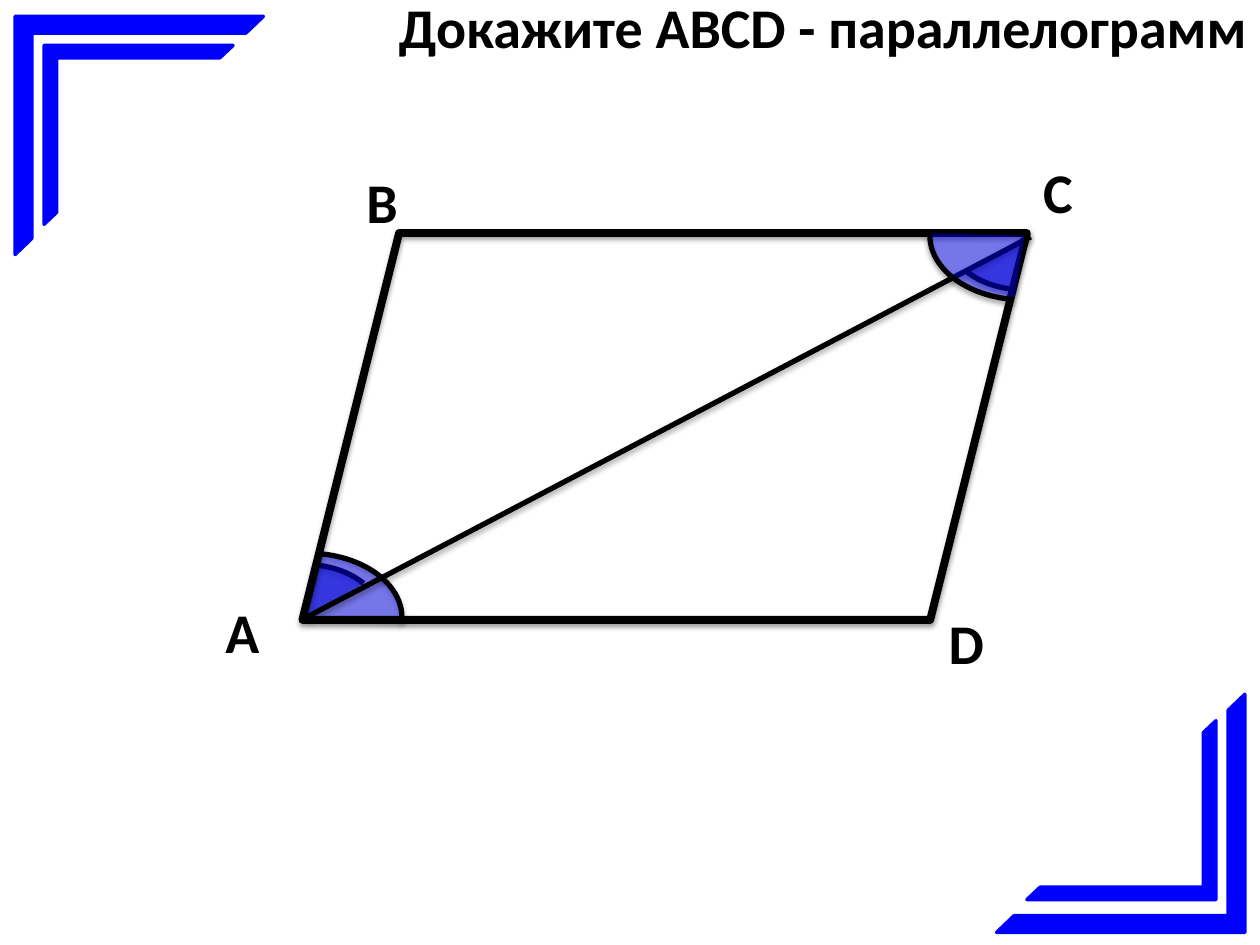
from typing import NamedTuple

from lxml.etree import SubElement
from pptx import Presentation
from pptx.dml.color import RGBColor
from pptx.enum.shapes import MSO_CONNECTOR, MSO_SHAPE
from pptx.enum.text import MSO_AUTO_SIZE, PP_ALIGN
from pptx.oxml.ns import qn
from pptx.util import Inches, Pt

BLACK = "000000"
BLUE = "0000FF"


class Box(NamedTuple):
    left: float
    top: float
    width: float
    height: float


class AngleMark(NamedTuple):
    box: Box
    end: float
    rotation: int


class Corner(NamedTuple):
    outer: Box
    inner: Box
    rotation: int


class Label(NamedTuple):
    text: str
    box: Box


INNER_END = 197.63
ANGLE_START = 167.49
ANGLES_BELOW = [
    AngleMark(Box(7.52, 1.45, 1.22, 0.85), INNER_END, 180),
    AngleMark(Box(1.81, 4.48, 1.22, 0.85), INNER_END, 0),
    AngleMark(Box(1.69, 4.39, 1.5, 1.02), 1.74, 0),
]
ANGLE_ON_TOP = AngleMark(Box(7.38, 1.36, 1.5, 1.02), 0.81, 180)
CORNERS = [
    Corner(Box(0.12, 0.13, 1.97, 1.89), Box(0.35, 0.36, 1.5, 1.42), 0),
    Corner(Box(7.91, 5.51, 1.97, 1.89), Box(8.15, 5.72, 1.5, 1.42), 180),
]
TITLE = Label("Докажите ABCD - параллелограмм", Box(2.32, -0.11, 7.68, 0.64))
VERTICES = [
    Label("А", Box(1.69, 4.69, 0.47, 0.64)),
    Label("D", Box(7.43, 4.78, 0.48, 0.64)),
    Label("C", Box(8.18, 1.2, 0.44, 0.64)),
    Label("B", Box(2.81, 1.28, 0.45, 0.64)),
]


def color(hex_code: str) -> RGBColor:
    return RGBColor.from_string(hex_code)


def set_line(shape, hex_code: str, width: float) -> None:
    shape.line.color.rgb = color(hex_code)
    shape.line.width = Pt(width)


def set_shadow(shape, distance: float, opacity: int) -> None:
    """Add a soft downward shadow; call after fill and line are set."""
    effects = SubElement(shape.element.spPr, qn("a:effectLst"))
    outer = SubElement(effects, qn("a:outerShdw"), blurRad=str(Pt(3.1)),
                       dist=str(Pt(distance)), dir="5400000", rotWithShape="0")
    tint = SubElement(outer, qn("a:srgbClr"), val=BLACK)
    SubElement(tint, qn("a:alpha"), val=str(opacity * 1000))


def add_preset(slide, preset: MSO_SHAPE, box: Box, rotation: int = 0):
    shape = slide.shapes.add_shape(preset, *map(Inches, box))
    shape.rotation = rotation
    return shape


def add_angle(slide, mark: AngleMark) -> None:
    arc = add_preset(slide, MSO_SHAPE.ARC, mark.box, mark.rotation)
    arc.adjustments[0] = ANGLE_START
    arc.adjustments[1] = mark.end
    arc.fill.solid()
    arc.fill.fore_color.rgb = color(BLUE)
    fill_color = arc.element.spPr.find(qn("a:solidFill")).find(qn("a:srgbClr"))
    SubElement(fill_color, qn("a:alpha"), val="45000")
    set_line(arc, BLACK, 3)
    set_shadow(arc, 1.8, 35)


def add_corner(slide, corner: Corner) -> None:
    for box in (corner.outer, corner.inner):
        frame = add_preset(slide, MSO_SHAPE.HALF_FRAME, box, corner.rotation)
        frame.adjustments[0] = 0.07
        frame.adjustments[1] = 0.07
        frame.fill.solid()
        frame.fill.fore_color.rgb = color(BLUE)
        set_line(frame, BLUE, 2)
        frame.shadow.inherit = False


def add_label(slide, label: Label, align: PP_ALIGN = PP_ALIGN.LEFT,
              wrap: bool = False) -> None:
    text_frame = slide.shapes.add_textbox(*map(Inches, label.box)).text_frame
    text_frame.word_wrap = wrap
    text_frame.auto_size = MSO_AUTO_SIZE.SHAPE_TO_FIT_TEXT
    text_frame.text = label.text
    paragraph = text_frame.paragraphs[0]
    paragraph.alignment = align
    font = paragraph.runs[0].font
    font.name = "Calibri"
    font.size = Pt(32)
    font.bold = True
    font.color.rgb = color(BLACK)


def add_parallelogram(slide) -> None:
    outline = add_preset(slide, MSO_SHAPE.PARALLELOGRAM, Box(2.4, 1.85, 5.75, 3.07))
    outline.fill.background()
    set_line(outline, BLACK, 4.5)
    set_shadow(outline, 1.6, 38)


def add_diagonal(slide) -> None:
    diagonal = slide.shapes.add_connector(
        MSO_CONNECTOR.STRAIGHT, *map(Inches, (2.43, 4.9, 8.18, 1.88)))
    set_line(diagonal, BLACK, 3)
    set_shadow(diagonal, 1.8, 35)


def main() -> None:
    deck = Presentation()
    deck.slide_width, deck.slide_height = Inches(10), Inches(7.5)
    slide = deck.slides.add_slide(deck.slide_layouts[6])

    for mark in ANGLES_BELOW:
        add_angle(slide, mark)
    for corner in CORNERS:
        add_corner(slide, corner)
    add_label(slide, TITLE, PP_ALIGN.RIGHT, wrap=True)
    add_parallelogram(slide)
    for vertex in VERTICES:
        add_label(slide, vertex)
    add_diagonal(slide)
    add_angle(slide, ANGLE_ON_TOP)

    deck.save("out.pptx")


if __name__ == "__main__":
    main()
